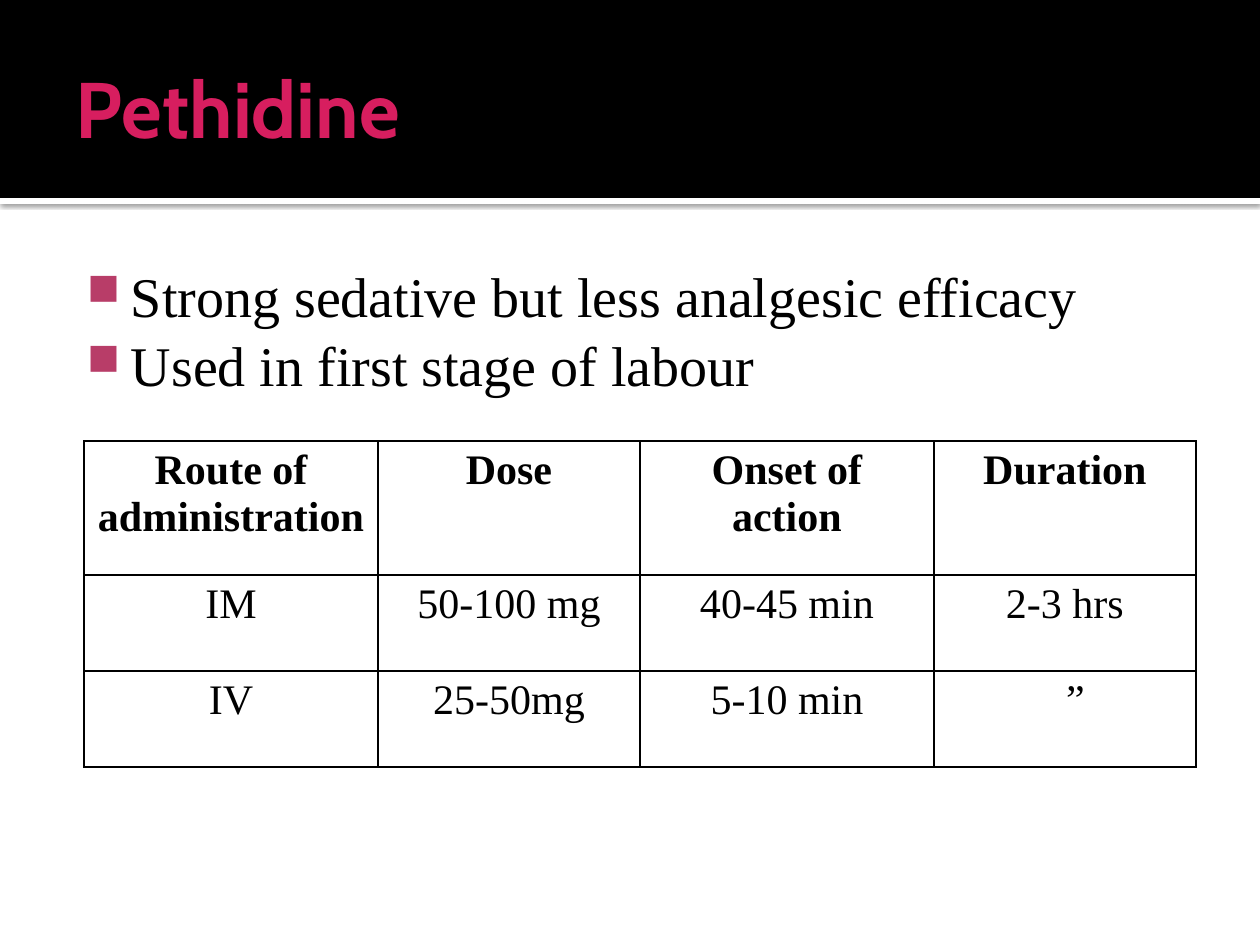
from lxml import etree
from pptx import Presentation, util as u
from pptx.dml.color import RGBColor
from pptx.enum import shapes, text
from pptx.oxml import parse_xml
from pptx.oxml.ns import qn

PX = 914400 // 126
NS = 'xmlns:a="http://schemas.openxmlformats.org/drawingml/2006/main"'
BODY_FONT = "Times New Roman"
BLACK, WHITE, PINK, BULLET = "000000", "FFFFFF", "D71E5F", "B83D68"


def px(*lengths):
    return [u.Emu(length * PX) for length in lengths]


def color(hex_code):
    return RGBColor.from_string(hex_code)


def style(paragraph, font_name, size, hex_code, bold=False):
    for run in paragraph.runs:
        font = run.font
        font.name, font.size, font.bold = font_name, u.Pt(size), bold
        font.color.rgb = color(hex_code)


def add_bar(slide, box, fill):
    bar = slide.shapes.add_shape(shapes.MSO_SHAPE.RECTANGLE, *px(*box))
    bar.shadow.inherit = False
    bar.fill.solid()
    bar.fill.fore_color.rgb = color(fill)
    bar.line.fill.background()
    return bar


def add_text_area(slide, box, insets, lines):
    frame = slide.shapes.add_textbox(*px(*box)).text_frame
    frame.word_wrap = True
    (frame.margin_left, frame.margin_top,
     frame.margin_right, frame.margin_bottom) = px(*insets)
    frame.text = "\n".join(lines)
    return frame


def add_header(slide, box, title):
    """Black band with the title, and a white strip casting a shadow under it."""
    left, top, width, height = box
    strip = add_bar(slide, (left, top + height, width, 6), WHITE)
    effects = strip._element.spPr.find(qn("a:effectLst"))
    effects.append(parse_xml(
        f'<a:outerShdw {NS} blurRad="{u.Pt(2.5)}" dist="{u.Pt(0.8)}" dir="5400000" '
        f'algn="tl" rotWithShape="0"><a:srgbClr val="{BLACK}">'
        '<a:alpha val="60000"/></a:srgbClr></a:outerShdw>'))
    add_bar(slide, box, BLACK)
    frame = add_text_area(slide, (left + 63, top + 21, width - 126, height - 25),
                          (13, 6, 6, 6), [title])
    frame.vertical_anchor = text.MSO_ANCHOR.MIDDLE
    style(frame.paragraphs[0], "Cabin", 45, PINK, bold=True)


def add_bullets(slide, box, lines):
    hanging = 44 * PX
    frame = add_text_area(slide, box, (8, 17, 13, 6), lines)
    for paragraph in frame.paragraphs:
        paragraph.space_before = u.Pt(1.5)
        style(paragraph, BODY_FONT, 32, BLACK)
        props = paragraph._p.get_or_add_pPr()
        props.set("marL", str(60 * PX))
        props.set("indent", str(-hanging))
        for bullet in (f'<a:buClr {NS}><a:srgbClr val="{BULLET}"/></a:buClr>',
                       f'<a:buSzPct {NS} val="80000"/>',
                       f'<a:buChar {NS} char="■"/>'):
            props.append(parse_xml(bullet))


def add_borders(cell):
    props = cell._tc.get_or_add_tcPr()
    for index, side in enumerate(("lnL", "lnR", "lnT", "lnB")):
        line = etree.fromstring(
            f'<a:{side} {NS} w="{u.Pt(1)}"><a:solidFill>'
            f'<a:srgbClr val="{BLACK}"/></a:solidFill></a:{side}>')
        props.insert(index, line)


def add_dose_table(slide, origin, widths, heights, rows):
    size = sum(widths), sum(heights)
    table = slide.shapes.add_table(len(rows), len(widths), *px(*origin, *size)).table
    for column, width in zip(table.columns, px(*widths)):
        column.width = width
    for row, height in zip(table.rows, px(*heights)):
        row.height = height
    for r, values in enumerate(rows):
        for c, value in enumerate(values):
            cell = table.cell(r, c)
            cell.fill.background()
            add_borders(cell)
            cell.text = value
            paragraph = cell.text_frame.paragraphs[0]
            paragraph.alignment = text.PP_ALIGN.CENTER
            style(paragraph, BODY_FONT, 24, BLACK, bold=r == 0)
    return table


def main():
    prs = Presentation()
    prs.slide_width, prs.slide_height = px(1260, 945)
    slide = prs.slides.add_slide(prs.slide_layouts[6])
    add_header(slide, (0, 0, 1260, 198), "Pethidine")
    add_bullets(slide, (63, 244, 1134, 638), [
        "Strong sedative but less analgesic efficacy",
        "Used in first stage of labour",
    ])
    doses = add_dose_table(slide, (84, 441), (294, 262, 294, 262), (134, 96, 96), [
        ("Route of administration", "Dose", "Onset of action", "Duration"),
        ("IM", "50-100 mg", "40-45 min", "2-3 hrs"),
        ("IV", "25-50mg", "5-10 min", "”"),
    ])
    # The ditto mark sits a little right of the column's centre.
    doses.cell(2, 3).margin_left = u.Emu(34 * PX)
    prs.save("out.pptx")


if __name__ == "__main__":
    main()
